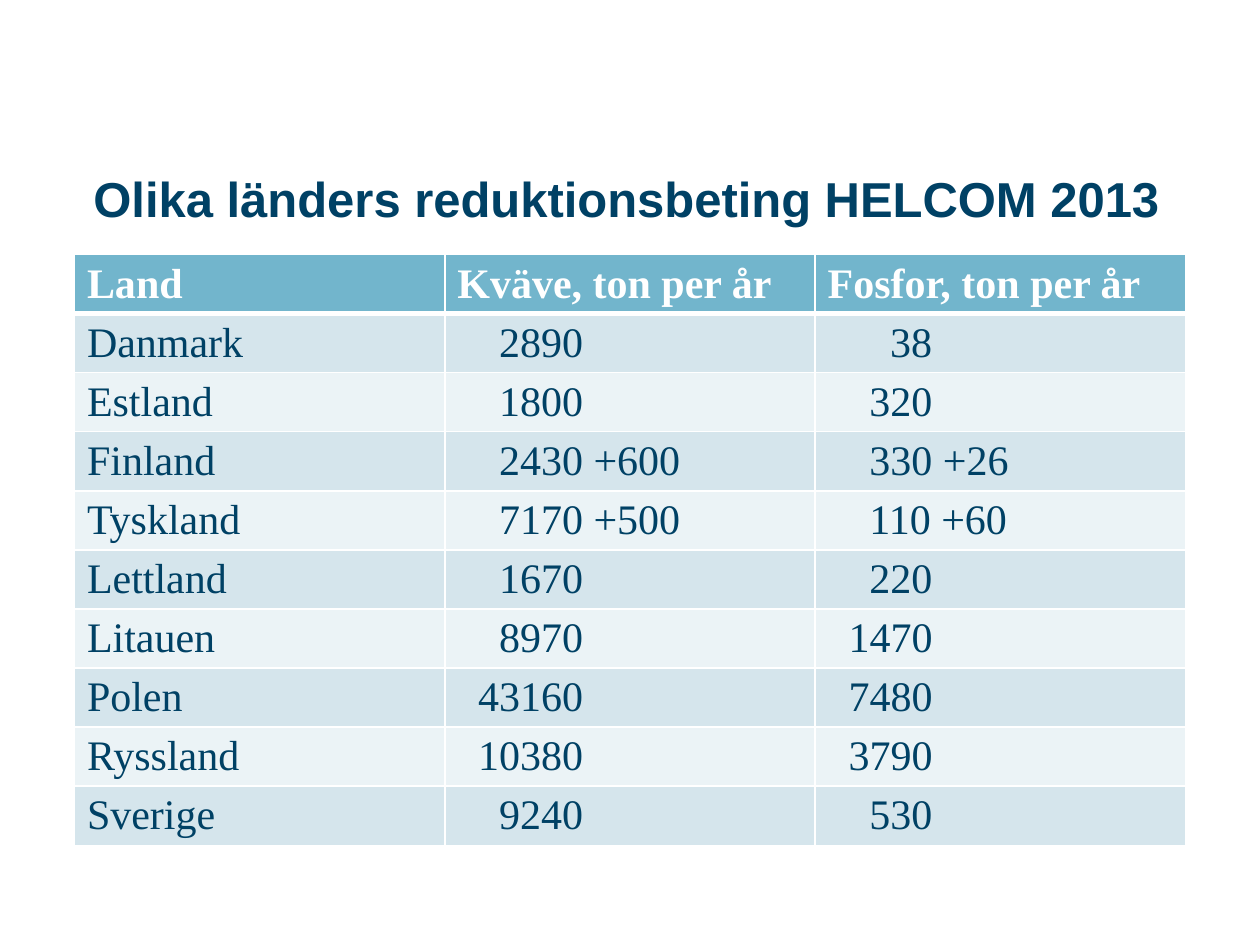
from dataclasses import dataclass

from lxml.etree import SubElement
from pptx import Presentation
from pptx.dml.color import RGBColor
from pptx.enum.text import MSO_ANCHOR, MSO_AUTO_SIZE, PP_ALIGN
from pptx.oxml.ns import qn
from pptx.util import Cm, Pt

TITLE = "Olika länders reduktionsbeting HELCOM 2013"
HEADERS = ("Land", "Kväve, ton per år", "Fosfor, ton per år")
COUNTRIES = [
    ("Danmark", "2890", "38"),
    ("Estland", "1800", "320"),
    ("Finland", "2430 +600", "330 +26"),
    ("Tyskland", "7170 +500", "110 +60"),
    ("Lettland", "1670", "220"),
    ("Litauen", "8970", "1470"),
    ("Polen", "43160", "7480"),
    ("Ryssland", "10380", "3790"),
    ("Sverige", "9240", "530"),
]


@dataclass(frozen=True)
class Theme:
    navy: str = "004165"
    white: str = "FFFFFF"
    header: str = "72B5CC"
    bands: tuple = ("D5E5EC", "EBF3F6")
    title_font: str = "Arial"
    table_font: str = "Times New Roman"
    title_size: int = 28
    table_size: int = 24
    thin: int = 1
    thick: int = 3


THEME = Theme()
LEFT, WIDTH = 1.5, 22.4
TITLE_TOP, TITLE_HEIGHT = 3.23, 1.5
TABLE_TOP, ROW_HEIGHT = 5.13, 1.03
DIGIT_WIDTH = 0.42


def add_run(paragraph, text, font_name, size, color, bold):
    run = paragraph.add_run()
    run.text = text
    font = run.font
    font.name, font.size, font.bold = font_name, Pt(size), bold
    font.color.rgb = RGBColor.from_string(color)


def add_borders(cell, widths):
    properties = cell._tc.get_or_add_tcPr()
    for side, width in widths.items():
        line = SubElement(properties, qn(f"a:ln{side}"), w=str(Pt(width)))
        fill = SubElement(line, qn("a:solidFill"))
        SubElement(fill, qn("a:srgbClr"), val=THEME.white)


def count_digits(value):
    return len(value.split()[0])


def indent_number(paragraph, value, most_digits):
    indent = DIGIT_WIDTH * (most_digits + 1 - count_digits(value))
    properties = paragraph._p.get_or_add_pPr()
    properties.set("marL", str(Cm(indent)))
    properties.set("indent", "0")


def add_title(slide):
    title = slide.shapes.title
    title.left, title.top = Cm(LEFT), Cm(TITLE_TOP)
    title.width, title.height = Cm(WIDTH), Cm(TITLE_HEIGHT)
    frame = title.text_frame
    frame.word_wrap = True
    frame.auto_size = MSO_AUTO_SIZE.NONE
    frame.vertical_anchor = MSO_ANCHOR.MIDDLE
    frame.margin_left, frame.margin_right = Cm(0), Cm(0.53)
    paragraph = frame.paragraphs[0]
    paragraph.alignment = PP_ALIGN.RIGHT
    add_run(paragraph, TITLE, THEME.title_font, THEME.title_size, THEME.navy, True)


def add_reduction_table(slide):
    rows = [HEADERS, *COUNTRIES]
    table = slide.shapes.add_table(
        len(rows), len(HEADERS), Cm(LEFT), Cm(TABLE_TOP),
        Cm(WIDTH), Cm(ROW_HEIGHT * len(rows)),
    ).table
    most_digits = [max(map(count_digits, column)) for column in zip(*COUNTRIES)]
    for row_index, values in enumerate(rows):
        is_header = row_index == 0
        fill = THEME.header if is_header else THEME.bands[(row_index - 1) % 2]
        color = THEME.white if is_header else THEME.navy
        borders = {
            "L": THEME.thin,
            "R": THEME.thin,
            "T": THEME.thick if row_index == 1 else THEME.thin,
            "B": THEME.thick if is_header else THEME.thin,
        }
        for column_index, value in enumerate(values):
            cell = table.cell(row_index, column_index)
            add_borders(cell, borders)
            cell.fill.solid()
            cell.fill.fore_color.rgb = RGBColor.from_string(fill)
            paragraph = cell.text_frame.paragraphs[0]
            if column_index > 0 and not is_header:
                indent_number(paragraph, value, most_digits[column_index])
            add_run(paragraph, value, THEME.table_font, THEME.table_size, color, is_header)


def main():
    presentation = Presentation()
    presentation.slide_width, presentation.slide_height = Cm(25.4), Cm(19.05)
    slide = presentation.slides.add_slide(presentation.slide_layouts[5])
    add_title(slide)
    add_reduction_table(slide)
    presentation.save("out.pptx")


if __name__ == "__main__":
    main()
